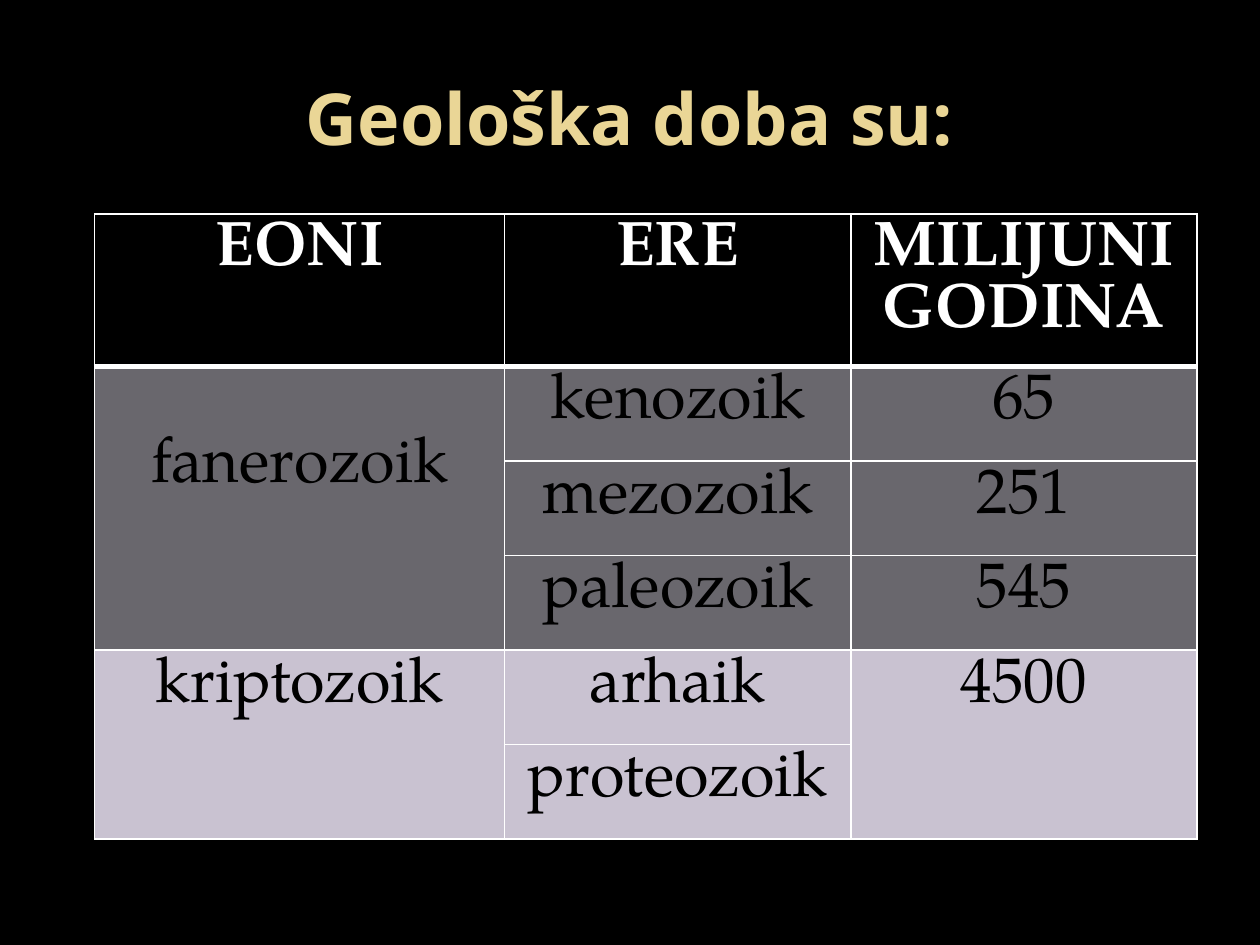
from lxml.etree import SubElement
from pptx import Presentation
from pptx.dml.color import RGBColor
from pptx.enum.text import MSO_ANCHOR, PP_ALIGN
from pptx.oxml.ns import qn
from pptx.util import Inches, Pt

COL_SHARES = (3.26, 2.75, 2.75)
ROW_SHARES = (1.21, 0.75, 0.75, 0.75, 0.75, 0.75)
HEADERS = ("EONI", "ERE", "MILIJUNI GODINA")
# Each eon: name, fill, top margin, rows of (era, million years)
EONS = (
    ("fanerozoik", "69676D", 0.56,
     (("kenozoik", "65"), ("mezozoik", "251"), ("paleozoik", "545"))),
    ("kriptozoik", "C9C2D1", 0.05,
     (("arhaik", "4500"), ("proteozoik", ""))),
)


def rgb(hex_color):
    return RGBColor.from_string(hex_color)


def format_text(tf, text, font, size, color, bold):
    tf.text = text
    p = tf.paragraphs[0]
    p.alignment = PP_ALIGN.CENTER
    p.font.name, p.font.size, p.font.bold = font, Pt(size), bold
    p.font.color.rgb = rgb(color)


def set_borders(cell, top=1, bottom=1):
    tc_pr = cell._tc.get_or_add_tcPr()
    for side, width in (("L", 1), ("R", 1), ("T", top), ("B", bottom)):
        ln = SubElement(tc_pr, qn(f"a:ln{side}"), w=str(Pt(width)))
        fill = SubElement(ln, qn("a:solidFill"))
        SubElement(fill, qn("a:srgbClr"), val="FFFFFF")


def fill_cell(cell, text, fill, color="000000", bold=False):
    if text:
        format_text(cell.text_frame, text, "TeX Gyre Pagella", 36, color, bold)
    cell.fill.solid()
    cell.fill.fore_color.rgb = rgb(fill)


def add_title(s, text, x, y, w, h):
    sp = s.shapes.title
    sp.left, sp.top, sp.width, sp.height = (Inches(v) for v in (x, y, w, h))
    sp.text_frame.vertical_anchor = MSO_ANCHOR.MIDDLE
    format_text(sp.text_frame, text, "Noto Sans", 41, "EAD696", True)


def add_eon_table(s, x, y, w, h):
    table = s.shapes.add_table(len(ROW_SHARES), len(COL_SHARES),
                               *(Inches(v) for v in (x, y, w, h))).table
    for col, share in zip(table.columns, COL_SHARES):
        col.width = Inches(w * share / sum(COL_SHARES))
    for row, share in zip(table.rows, ROW_SHARES):
        row.height = Inches(h * share / sum(ROW_SHARES))

    # White grid with a heavy rule under the header
    for i in range(len(ROW_SHARES)):
        for j in range(len(COL_SHARES)):
            set_borders(table.cell(i, j), 3 if i == 1 else 1, 3 if i == 0 else 1)

    for j, text in enumerate(HEADERS):
        fill_cell(table.cell(0, j), text, "000000", "FFFFFF", True)

    # One block of rows per eon
    first = 1
    for eon, fill, margin, eras in EONS:
        last = first + len(eras) - 1
        for i, texts in enumerate(eras, first):
            for j, text in enumerate((eon if i == first else "", *texts)):
                fill_cell(table.cell(i, j), text, fill)
        table.cell(first, 0).margin_top = Inches(margin)
        table.cell(first, 0).merge(table.cell(last, 0))
        if not eras[-1][1]:
            table.cell(first, 2).merge(table.cell(last, 2))
        first = last + 1


def main():
    prs = Presentation()
    prs.slide_width, prs.slide_height = Inches(10), Inches(7.5)
    s = prs.slides.add_slide(prs.slide_layouts[5])
    s.background.fill.solid()
    s.background.fill.fore_color.rgb = rgb("000000")
    add_title(s, "Geološka doba su:", 0.5, 0.3, 9, 1.25)
    add_eon_table(s, 0.75, 1.7, 8.75, 4.96)
    prs.save("out.pptx")


if __name__ == "__main__":
    main()
